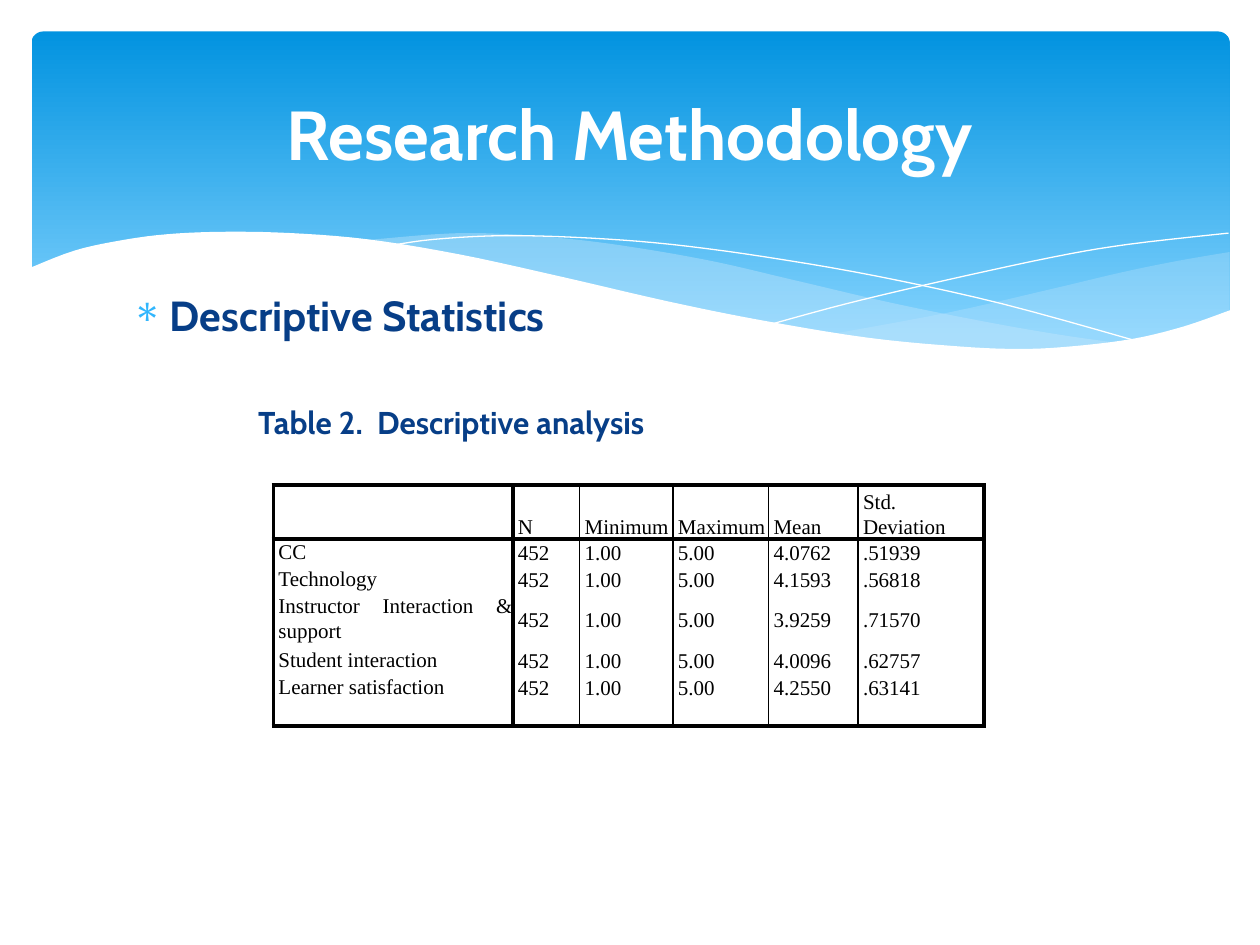
from lxml.etree import SubElement
from pptx import Presentation
from pptx.dml.color import RGBColor
from pptx.enum.shapes import MSO_SHAPE
from pptx.enum.text import MSO_ANCHOR, PP_ALIGN
from pptx.oxml.ns import qn
from pptx.util import Inches, Pt

COLORS = {"top": "0293E0", "bottom": "83D3FE", "wave": "C6E7FC", "white": "FFFFFF",
          "navy": "073E87", "bullet": "31B6FD", "black": "000000"}

RIGHT_WAVE_TOP = [(9.76, 2), (9.35, 2.07), (8.91, 2.16), (8.32, 2.3), (7.53, 2.48), (6.61, 2.65)]
RIGHT_WAVE_BOTTOM = [(6.61, 2.65), (7.05, 2.71), (7.57, 2.76), (8.14, 2.78), (8.63, 2.75),
                     (9.05, 2.69), (9.42, 2.59), (9.76, 2.47)]
LONG_WAVE_TOP = [(8.93, 2.73), (8.37, 2.65), (7.75, 2.54), (7.06, 2.4), (6.29, 2.22),
                 (5.69, 2.08), (5.14, 1.98), (4.65, 1.91), (4.2, 1.87), (3.8, 1.85),
                 (3.44, 1.86), (2.86, 1.91)]
LONG_WAVE_BOTTOM = [(2.86, 1.91), (3.42, 1.99), (4.04, 2.11), (4.91, 2.32), (5.66, 2.48),
                    (6.34, 2.61), (6.95, 2.7), (7.48, 2.76), (8.07, 2.78), (8.57, 2.77),
                    (8.93, 2.73)]
FALLING_LINE = [(3.09, 1.95), (3.44, 1.9), (4.01, 1.87), (4.69, 1.89), (5.33, 1.94),
                (6.08, 2.04), (6.95, 2.19), (7.95, 2.41), (9.07, 2.72)]
RISING_LINE = [(6.13, 2.57), (6.72, 2.41), (7.48, 2.23), (8.36, 2.04), (8.95, 1.94), (9.75, 1.85)]
WHITE_WAVE_TOP = [(9.77, 2.46), (9.4, 2.59), (8.99, 2.69), (8.5, 2.75), (8.09, 2.77),
                  (7.61, 2.75), (6.88, 2.68), (6.03, 2.54), (5.29, 2.39), (4.47, 2.2),
                  (3.65, 2.02), (2.92, 1.9), (2.3, 1.85), (1.77, 1.84), (1.32, 1.86),
                  (0.95, 1.91), (0.59, 1.99), (0.23, 2.13)]
WHITE_WAVE_BASE = [(0.23, 3.29), (9.77, 3.29)]

COL_WIDTHS = [1.9, 0.53, 0.74, 0.76, 0.71, 1]
ROW_HEIGHTS = [0.4, 0.2, 0.2, 0.39, 0.2, 0.2, 0.2]
ROWS = [
    ["", "N", "Minimum", "Maximum", "Mean", "Std. Deviation"],
    ["CC", "452", "1.00", "5.00", "4.0762", ".51939"],
    ["Technology", "452", "1.00", "5.00", "4.1593", ".56818"],
    ["Instructor Interaction & support", "452", "1.00", "5.00", "3.9259", ".71570"],
    ["Student interaction", "452", "1.00", "5.00", "4.0096", ".62757"],
    ["Learner satisfaction", "452", "1.00", "5.00", "4.2550", ".63141"],
    [""] * 6,
]


def rgb(name):
    """Return the named colour."""
    return RGBColor.from_string(COLORS[name])


def smooth(points, steps=5):
    """Return a Catmull-Rom curve through the points."""
    ends = [points[0], *points, points[-1]]
    curve = [points[0]]
    for a, b, c, d in zip(ends, ends[1:], ends[2:], ends[3:]):
        for i in range(1, steps + 1):
            t = i / steps
            curve.append(tuple(
                0.5 * (2 * q + (r - p) * t + (2 * p - 5 * q + 4 * r - s) * t ** 2
                       + (3 * q - p - 3 * r + s) * t ** 3)
                for p, q, r, s in zip(a, b, c, d)))
    return curve


def add_outline(slide, points, fill=None, alpha=None):
    """Draw a filled closed outline, or a white hairline when there is no fill."""
    pts = [(Inches(x), Inches(y)) for x, y in points]
    builder = slide.shapes.build_freeform(*pts[0], scale=1.0)
    builder.add_line_segments(pts[1:], close=fill is not None)
    s = builder.convert_to_shape()
    s.shadow.inherit = False
    if fill is None:
        s.fill.background()
        s.line.color.rgb = rgb("white")
        s.line.width = Pt(0)
        return
    s.fill.solid()
    s.fill.fore_color.rgb = rgb(fill)
    s.line.fill.background()
    if alpha:
        color = s._element.spPr.find(qn("a:solidFill"))[0]
        SubElement(color, qn("a:alpha"), val=str(alpha * 1000))


def add_banner(slide):
    """Draw the gradient banner with its waves and hairlines."""
    s = slide.shapes.add_shape(MSO_SHAPE.ROUNDED_RECTANGLE, Inches(0.25), Inches(0.25),
                               Inches(9.51), Inches(2.7))
    s.adjustments[0] = 0.034
    s.shadow.inherit = False
    s.line.fill.background()
    s.fill.gradient()
    s.fill.gradient_angle = 270
    for stop, position, name in zip(s.fill.gradient_stops, (0, 0.9), ("top", "bottom")):
        stop.position = position
        stop.color.rgb = rgb(name)
    add_outline(slide, smooth(RIGHT_WAVE_TOP) + smooth(RIGHT_WAVE_BOTTOM), "wave", 29)
    add_outline(slide, smooth(LONG_WAVE_TOP) + smooth(LONG_WAVE_BOTTOM), "wave", 40)
    add_outline(slide, smooth(FALLING_LINE))
    add_outline(slide, smooth(RISING_LINE))
    add_outline(slide, smooth(WHITE_WAVE_TOP) + WHITE_WAVE_BASE, "white")


def write(p, text, size=12, font="Cabin", color="navy", bold=False, align=None,
          margin=0, indent=0, before=None, spacing=None, bullet=None):
    """Write formatted text into a paragraph."""
    pPr = p._p.get_or_add_pPr()
    pPr.set("marL", str(Inches(margin)))
    pPr.set("indent", str(Inches(indent)))
    p.alignment = align
    if before is not None:
        p.space_before = Pt(before)
    if spacing:
        p.line_spacing = spacing
    if bullet:
        SubElement(SubElement(pPr, qn("a:buClr")), qn("a:srgbClr"), val=COLORS["bullet"])
        SubElement(pPr, qn("a:buChar"), char=bullet)
    if not text:
        SubElement(p._p, qn("a:endParaRPr"), sz=str(size * 100))
        return
    r = p.add_run()
    r.text = text
    r.font.size = Pt(size)
    r.font.name = font
    r.font.bold = bold
    r.font.color.rgb = rgb(color)


def add_text_frame(slide, left, top, width, height, anchor=MSO_ANCHOR.TOP):
    """Add a wrapping text box and return its frame."""
    tf = slide.shapes.add_textbox(Inches(left), Inches(top), Inches(width), Inches(height)).text_frame
    tf.word_wrap = True
    tf.vertical_anchor = anchor
    return tf


def set_borders(cell, **widths):
    """Set black cell borders by side, where zero hides the side."""
    tcPr = cell._tc.get_or_add_tcPr()
    for side, width in widths.items():
        ln = SubElement(tcPr, qn(f"a:ln{side}"), w=str(Pt(width)))
        if width:
            SubElement(SubElement(ln, qn("a:solidFill")), qn("a:srgbClr"), val=COLORS["black"])
        else:
            SubElement(ln, qn("a:noFill"))


def add_statistics_table(slide):
    """Add the table of descriptive statistics."""
    table = slide.shapes.add_table(len(ROWS), len(COL_WIDTHS), Inches(2.17), Inches(3.85),
                                   Inches(sum(COL_WIDTHS)), Inches(sum(ROW_HEIGHTS))).table
    table.first_row = table.horz_banding = False
    for column, width in zip(table.columns, COL_WIDTHS):
        column.width = Inches(width)
    last_row, last_col = len(ROWS) - 1, len(COL_WIDTHS) - 1
    for i, (row, height) in enumerate(zip(ROWS, ROW_HEIGHTS)):
        table.rows[i].height = Inches(height)
        for j, text in enumerate(row):
            cell = table.cell(i, j)
            set_borders(cell, L=2.25 if j < 2 else 1, R=2.25 if j in (0, last_col) else 1,
                        T=2.25 if i < 2 else 0, B=2.25 if i in (0, last_row) else 0)
            cell.fill.solid()
            cell.fill.fore_color.rgb = rgb("white")
            cell.margin_left = cell.margin_right = cell.margin_top = cell.margin_bottom = 0
            if i == 0:
                cell.vertical_anchor = MSO_ANCHOR.BOTTOM
            else:
                cell.vertical_anchor = MSO_ANCHOR.MIDDLE if j else MSO_ANCHOR.TOP
            write(cell.text_frame.paragraphs[0], text, font="Times New Roman", color="black",
                  align=PP_ALIGN.JUSTIFY, margin=0.04, spacing=1.07)


def main():
    """Build and save the slide."""
    prs = Presentation()
    prs.slide_width, prs.slide_height = Inches(10), Inches(7.5)
    slide = prs.slides.add_slide(prs.slide_layouts[6])
    add_banner(slide)
    body = add_text_frame(slide, 0.95, 2.25, 8.1, 4.45)
    write(body.paragraphs[0], "Descriptive Statistics", size=24, bold=True,
          margin=0.3, indent=-0.3, before=5, bullet="∗")
    write(body.add_paragraph(), "Table 2.  Descriptive analysis", size=18, bold=True,
          margin=1, before=36)
    title = add_text_frame(slide, 0.5, 0.37, 9, 1.37, MSO_ANCHOR.MIDDLE)
    write(title.paragraphs[0], "Research Methodology", size=39.6, color="white", bold=True,
          align=PP_ALIGN.CENTER)
    add_statistics_table(slide)
    prs.save("out.pptx")


if __name__ == "__main__":
    main()
